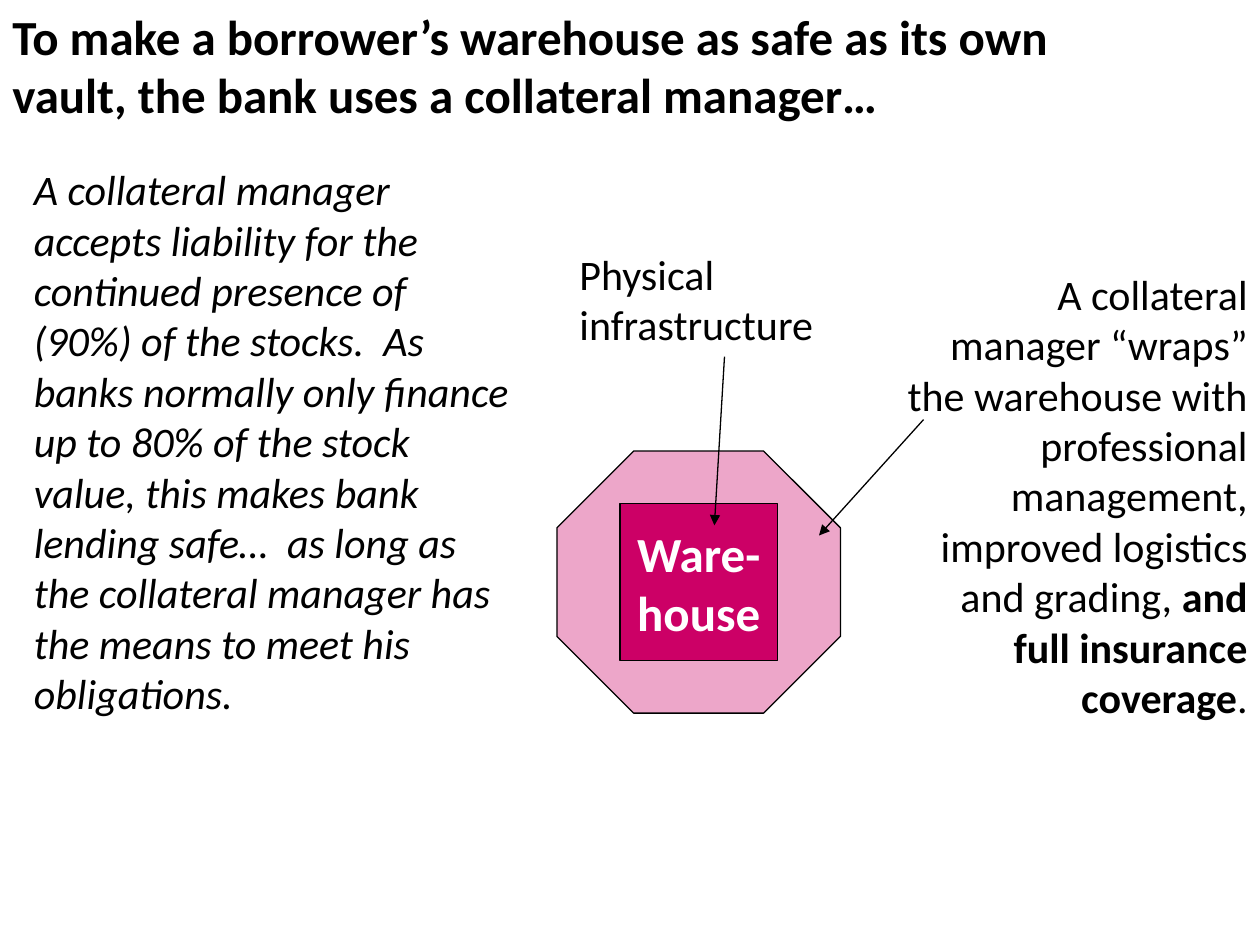
from lxml import etree
from pptx import Presentation
from pptx.dml.color import RGBColor
from pptx.enum import shapes, text
from pptx.oxml import ns
from pptx.util import Inches, Pt

BLACK, WHITE, PINK = "000000", "FFFFFF", "CC0066"


def color(code):
    return RGBColor.from_string(code)


def add_run(para, words, size=24, code=BLACK, bold=False, italic=False):
    run = para.add_run()
    run.text = words
    font = run.font
    font.name, font.size = "Calibri", Pt(size)
    font.bold, font.italic = bold, italic
    font.color.rgb = color(code)


def add_text(slide, box, runs, align=text.PP_ALIGN.LEFT):
    """Place one wrapped paragraph; runs are (words, style) pairs."""
    frame = slide.shapes.add_textbox(*map(Inches, box)).text_frame
    frame.word_wrap = True
    frame.auto_size = text.MSO_AUTO_SIZE.SHAPE_TO_FIT_TEXT
    para = frame.paragraphs[0]
    para.alignment = align
    for words, style in runs:
        add_run(para, words, **style)


def add_block(slide, kind, box):
    block = slide.shapes.add_shape(kind, *map(Inches, box))
    block.shadow.inherit = False
    block.fill.solid()
    block.fill.fore_color.rgb = color(PINK)
    block.line.color.rgb = color(BLACK)
    block.line.width = Pt(0.75)
    return block


def add_arrow(slide, start, end):
    ends = map(Inches, (*start, *end))
    arrow = slide.shapes.add_connector(shapes.MSO_CONNECTOR.STRAIGHT, *ends)
    arrow.line.color.rgb = color(BLACK)
    arrow.line.width = Pt(0.75)
    line = arrow.line._get_or_add_ln()
    etree.SubElement(line, ns.qn("a:tailEnd"), type="triangle")
    etree.SubElement(arrow._element.spPr, ns.qn("a:effectLst"))


def add_store(slide, left, top, width, height):
    """Draw the warehouse centred in its translucent wrap."""
    wrap = add_block(slide, shapes.MSO_SHAPE.OCTAGON, (left, top, width, height))
    wrap.adjustments[0] = 0.293
    tint = wrap.fill._xPr.find(".//" + ns.qn("a:srgbClr"))
    etree.SubElement(tint, ns.qn("a:alpha"), val="35000")

    side = 1.25
    box = (left + (width - side) / 2, top + (height - side) / 2, side, side)
    core = add_block(slide, shapes.MSO_SHAPE.RECTANGLE, box)
    frame = core.text_frame
    frame.word_wrap = False
    frame.vertical_anchor = text.MSO_ANCHOR.MIDDLE
    for i, words in enumerate(("Ware-", "house")):
        para = frame.add_paragraph() if i else frame.paragraphs[0]
        para.alignment = text.PP_ALIGN.CENTER
        add_run(para, words, size=28, code=WHITE, bold=True)


def add_scheme(slide, left, top):
    """Draw the warehouse, its two labels and their arrows."""
    add_store(slide, left, top + 1.66, 2.25, 2.08)
    add_arrow(slide, (left + 2.91, top + 1.41), (left + 2.08, top + 2.33))
    add_text(slide, (left + 2.66, top + 0.16, 2.92, 3.74), [
        ("A collateral manager “wraps” the warehouse with professional "
         "management, improved logistics and grading,", {}),
        (" and full insurance coverage", {"bold": True}),
        (".", {}),
    ], text.PP_ALIGN.RIGHT)
    add_arrow(slide, (left + 1.33, top + 0.91), (left + 1.25, top + 2.25))
    add_text(slide, (left + 0.08, top, 2.58, 0.91),
             [("Physical infrastructure", {})])


def main():
    deck = Presentation()
    deck.slide_width, deck.slide_height = Inches(10), Inches(7.5)
    slide = deck.slides.add_slide(deck.slide_layouts[6])
    add_scheme(slide, 4.42, 1.92)
    add_text(slide, (0.17, 1.25, 4, 4.54), [
        ("A collateral manager accepts liability for the continued presence "
         "of (90%) of the stocks.  As banks normally only finance up to 80% "
         "of the stock value, this makes bank lending safe…  as long as the "
         "collateral manager has the means to meet his obligations.",
         {"italic": True}),
    ])
    add_text(slide, (0, 0, 9.33, 1.04), [
        ("To make a borrower’s warehouse as safe as its own vault, "
         "the bank uses a collateral manager…", {"size": 28, "bold": True}),
    ])
    deck.save("out.pptx")


if __name__ == "__main__":
    main()
